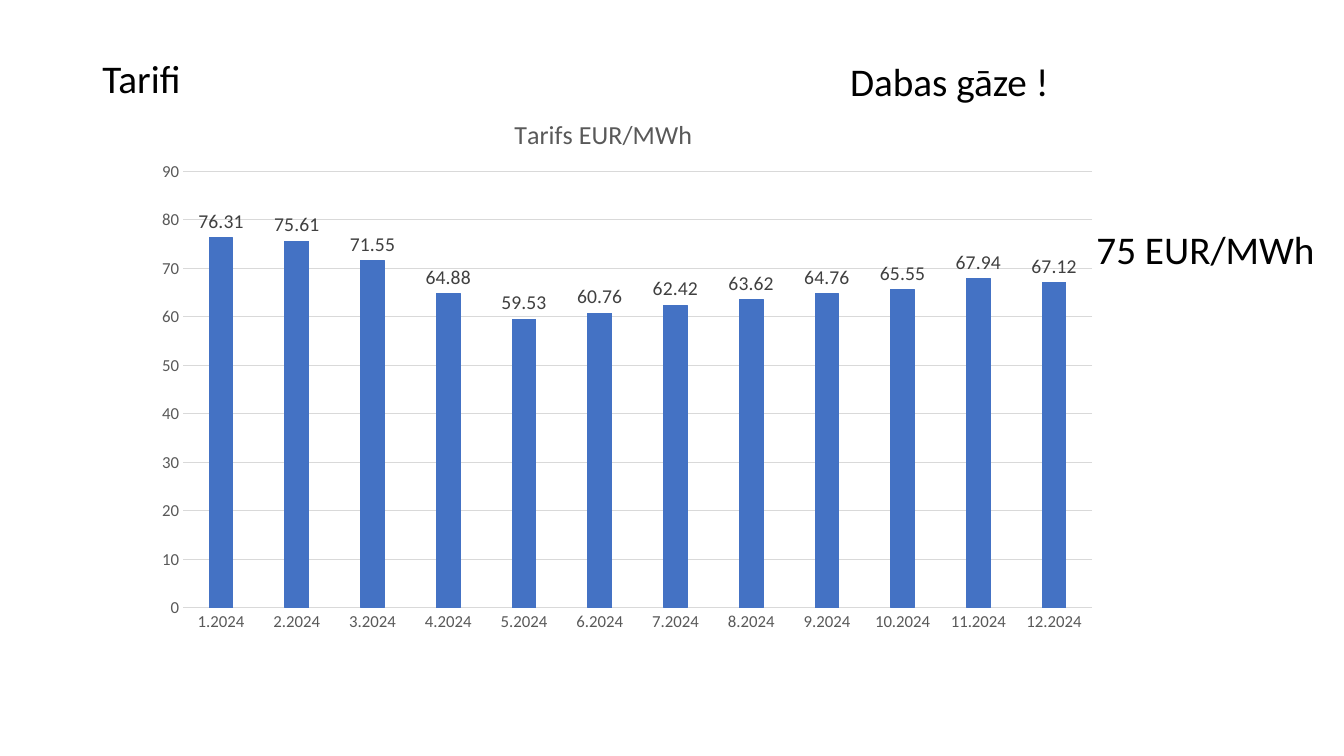
from lxml import etree
from pptx import Presentation
from pptx import util as u
from pptx.chart import data as cd
from pptx.dml import color
from pptx.enum import chart as ce, text
from pptx.oxml import ns

Pt = u.Pt
TARIFFS = [76.31, 75.61, 71.55, 64.88, 59.53, 60.76,
           62.42, 63.62, 64.76, 65.55, 67.94, 67.12]


def rgb(value):
    return color.RGBColor.from_string(value)


def write(p, words, font="Calibri", size=28, fill="000000", before=0, indent=0):
    """Fill a paragraph, without a bullet, with one formatted run."""
    pPr = p._p.get_or_add_pPr()
    pPr.set("marL", str(Pt(indent)))
    pPr.set("indent", "0")
    etree.SubElement(pPr, ns.qn("a:buNone"))
    p.alignment = text.PP_ALIGN.LEFT
    p.line_spacing = 0.9
    p.space_before = Pt(before)
    r = p.add_run()
    r.text = words
    style(r.font, font, size, fill)


def style(font, name, size, fill):
    font.name, font.size, font.bold = name, Pt(size), False
    font.color.rgb = rgb(fill)


class Deck:
    font, ink, grey, grid, blue = "Calibri", "000000", "595959", "D9D9D9", "4472C4"

    def __init__(self, prs):
        self.s = prs.slides.add_slide(prs.slide_layouts[1])

    def holder(self, idx, box, anchor, paragraphs):
        """Move a placeholder and fill it with (words, format) pairs."""
        sp = self.s.placeholders[idx]
        sp.left, sp.top, sp.width, sp.height = map(Pt, box)
        tf = sp.text_frame
        tf.auto_size = text.MSO_AUTO_SIZE.NONE
        tf.vertical_anchor = anchor
        for i, (words, fmt) in enumerate(paragraphs):
            p = tf.add_paragraph() if i else tf.paragraphs[0]
            write(p, words, font=self.font, fill=self.ink, **fmt)

    def line(self, ln):
        ln.color.rgb = rgb(self.grid)
        ln.width = Pt(0.75)

    def columns(self, box, name, cats, values, plot):
        data = cd.CategoryChartData()
        data.categories = cats
        data.add_series(name, values)
        chart = self.s.shapes.add_chart(
            ce.XL_CHART_TYPE.COLUMN_CLUSTERED, *map(Pt, box), data).chart
        style(chart.font, self.font, 10, self.ink)
        chart.has_legend = False

        # Chart title
        chart.has_title = True
        tf = chart.chart_title.text_frame
        tf.text = name
        style(tf.paragraphs[0].runs[0].font, self.font, 18.6, self.grey)
        chart.chart_title.include_in_layout = False

        # Axes
        for axis in (chart.category_axis, chart.value_axis):
            axis.major_tick_mark = axis.minor_tick_mark = ce.XL_TICK_MARK.NONE
            style(axis.tick_labels.font, self.font, 12, self.grey)
        self.line(chart.category_axis.format.line)
        axis = chart.value_axis
        axis.minimum_scale, axis.maximum_scale, axis.major_unit = 0, 90, 10
        axis.format.line.fill.background()
        self.line(axis.major_gridlines.format.line)

        # Columns and their labels
        bars = chart.plots[0]
        bars.gap_width = 219
        bars.vary_by_categories = False
        fmt = bars.series[0].format
        fmt.fill.solid()
        fmt.fill.fore_color.rgb = fmt.line.color.rgb = rgb(self.blue)
        fmt.line.width = Pt(0.75)
        labels = bars.series[0].data_labels
        labels.show_value = True
        labels.position = ce.XL_LABEL_POSITION.OUTSIDE_END
        style(labels.font, self.font, 14, "404040")
        self.place_plot(chart, plot)

    def place_plot(self, chart, plot):
        """Set the inner plot area as fractions of the chart."""
        area = chart._chartSpace.find(".//" + ns.qn("c:plotArea"))
        for old in area.findall(ns.qn("c:layout")):
            area.remove(old)
        layout = etree.Element(ns.qn("c:layout"))
        manual = etree.SubElement(layout, ns.qn("c:manualLayout"))
        settings = [("layoutTarget", "inner"), ("xMode", "edge"), ("yMode", "edge")]
        for tag, val in settings + list(zip("xywh", plot)):
            etree.SubElement(manual, ns.qn("c:" + tag)).set("val", str(val))
        area.insert(0, layout)


def main():
    prs = Presentation()
    prs.slide_width, prs.slide_height = Pt(960), Pt(540)
    deck = Deck(prs)

    # Title and remarks
    deck.holder(0, (66, 29, 828, 57.6), text.MSO_ANCHOR.MIDDLE, [("Tarifi", {})])
    deck.holder(1, (600, 41, 360, 330), text.MSO_ANCHOR.TOP,
                [("Dabas gāze !", {}),
                 ("75 EUR/MWh", {"before": 90, "indent": 176})])

    # Monthly tariffs
    months = [f"{month}.2024" for month in range(1, 13)]
    deck.columns((82, 67, 698.4, 427), "Tarifs EUR/MWh", months, TARIFFS,
                 (0.07, 0.13, 0.93, 0.73))
    prs.save("out.pptx")


if __name__ == "__main__":
    main()
